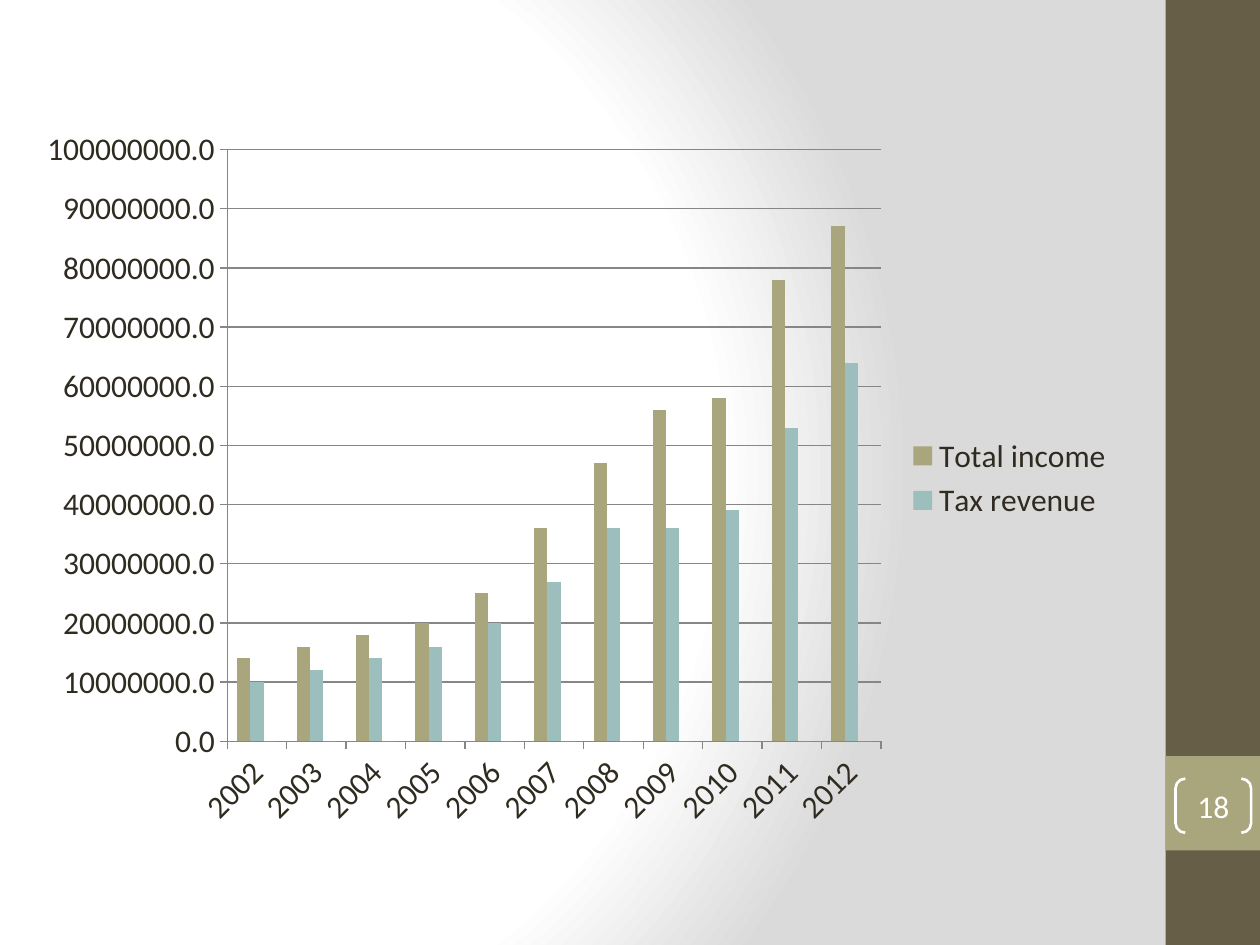
from pptx import Presentation
from pptx.chart.data import CategoryChartData
from pptx.dml.color import RGBColor
from pptx.enum.chart import XL_CHART_TYPE, XL_LEGEND_POSITION, XL_TICK_MARK
from pptx.enum.shapes import MSO_SHAPE
from pptx.enum.text import MSO_ANCHOR, PP_ALIGN
from pptx.oxml import parse_xml
from pptx.oxml.ns import nsdecls, qn
from pptx.util import Inches, Pt

RECTANGLE = MSO_SHAPE.RECTANGLE
BRACKETS = MSO_SHAPE.DOUBLE_BRACKET
CLUSTERED = XL_CHART_TYPE.COLUMN_CLUSTERED
LEGEND_RIGHT = XL_LEGEND_POSITION.RIGHT
TICK_OUTSIDE = XL_TICK_MARK.OUTSIDE
TICK_NONE = XL_TICK_MARK.NONE
MIDDLE = MSO_ANCHOR.MIDDLE
CENTER = PP_ALIGN.CENTER

COLORS = {
    "white": "FFFFFF",
    "gray": "DADADA",
    "brown": "675E47",
    "olive": "A9A57C",
    "teal": "9CBEBD",
    "yellow": "D2CB6C",
    "text": "2F2B20",
    "axis": "868686",
}
FONT = {"name": "Calibri", "size": Pt(18)}


def rgb(name):
    return RGBColor.from_string(COLORS[name])


def style_font(font, color):
    for key, value in FONT.items():
        setattr(font, key, value)
    font.color.rgb = rgb(color)


deck = Presentation()
deck.slide_width = Inches(10)
deck.slide_height = Inches(7.5)
page = deck.slides.add_slide(deck.slide_layouts[6])

stops = "".join(
    f'<a:gs pos="{percent * 1000}"><a:srgbClr val="{COLORS[color]}"/></a:gs>'
    for percent, color in [(0, "white"), (75, "white"), (100, "gray")]
)
background = parse_xml(
    f'<p:bg {nsdecls("p", "a")}><p:bgPr><a:gradFill rotWithShape="1">'
    f'<a:gsLst>{stops}</a:gsLst><a:path path="circle">'
    '<a:fillToRect l="20000" t="50000" r="100000" b="50000"/></a:path>'
    '</a:gradFill><a:effectLst/></p:bgPr></p:bg>'
)
page.element.cSld.insert(0, background)

for top, height, color in [(0, 7.5, "brown"), (6, 0.75, "olive")]:
    band = page.shapes.add_shape(
        RECTANGLE, Inches(9.25), Inches(top), Inches(0.75), Inches(height)
    )
    band.shadow.inherit = False
    band.fill.solid()
    band.fill.fore_color.rgb = rgb(color)
    band.line.fill.background()

number = page.shapes.add_shape(
    BRACKETS, Inches(9.33), Inches(6.18), Inches(0.6), Inches(0.43)
)
number.shadow.inherit = False
number.adjustments[0] = 0.18
number.fill.background()
number.line.color.rgb = rgb("white")
number.line.width = Pt(1.5)
frame = number.text_frame
frame_format = {
    "margin_left": 0,
    "margin_top": 0,
    "margin_right": 0,
    "margin_bottom": 0,
    "vertical_anchor": MIDDLE,
}
for key, value in frame_format.items():
    setattr(frame, key, value)
para = frame.paragraphs[0]
para.alignment = CENTER
span = para.add_run()
span.text = "18"
style_font(span.font, "white")

MILLION = 1000000
series_rows = [
    ("Total income", "olive", [14, 16, 18, 20, 25, 36, 47, 56, 58, 78, 87]),
    ("Tax revenue", "teal", [10, 12, 14, 16, 20, 27, 36, 36, 39, 53, 64]),
    ("Series 3", "yellow", [0] * 11),
]
data = CategoryChartData(number_format="0.0")
data.categories = [str(year) for year in range(2002, 2013)]
for name, color, values in series_rows:
    data.add_series(name, [value * MILLION for value in values])

chart = page.shapes.add_chart(
    CLUSTERED, Inches(0.2), Inches(0.92), Inches(8.74), Inches(5.75), data
).chart
style_font(chart.font, "text")
chart.has_title = False
chart.has_legend = True
chart.legend.position = LEGEND_RIGHT
chart.legend.include_in_layout = False
chart.legend._element.insert(1, parse_xml(
    f'<c:legendEntry {nsdecls("c")}><c:idx val="2"/><c:delete val="1"/></c:legendEntry>'
))

plot = chart.plots[0]
plot.gap_width = 150
plot.overlap = 0
plot.vary_by_categories = False
for series, (name, color, values) in zip(plot.series, series_rows):
    series.format.fill.solid()
    series.format.fill.fore_color.rgb = rgb(color)

value_axis = chart.value_axis
value_axis.minimum_scale = 0
value_axis.maximum_scale = 100 * MILLION
value_axis.major_unit = 10 * MILLION
value_axis.has_major_gridlines = True
value_axis.tick_labels.number_format = "0.0"
value_axis.tick_labels.number_format_is_linked = False
for axis in (chart.category_axis, value_axis):
    axis.major_tick_mark = TICK_OUTSIDE
    axis.minor_tick_mark = TICK_NONE
    style_font(axis.tick_labels.font, "text")
for part in (chart.category_axis, value_axis, value_axis.major_gridlines):
    part.format.line.color.rgb = rgb("axis")
    part.format.line.width = Pt(0.75)
chart.category_axis._element.find(qn("c:txPr")).find(qn("a:bodyPr")).set("rot", "-2700000")

deck.save("out.pptx")
